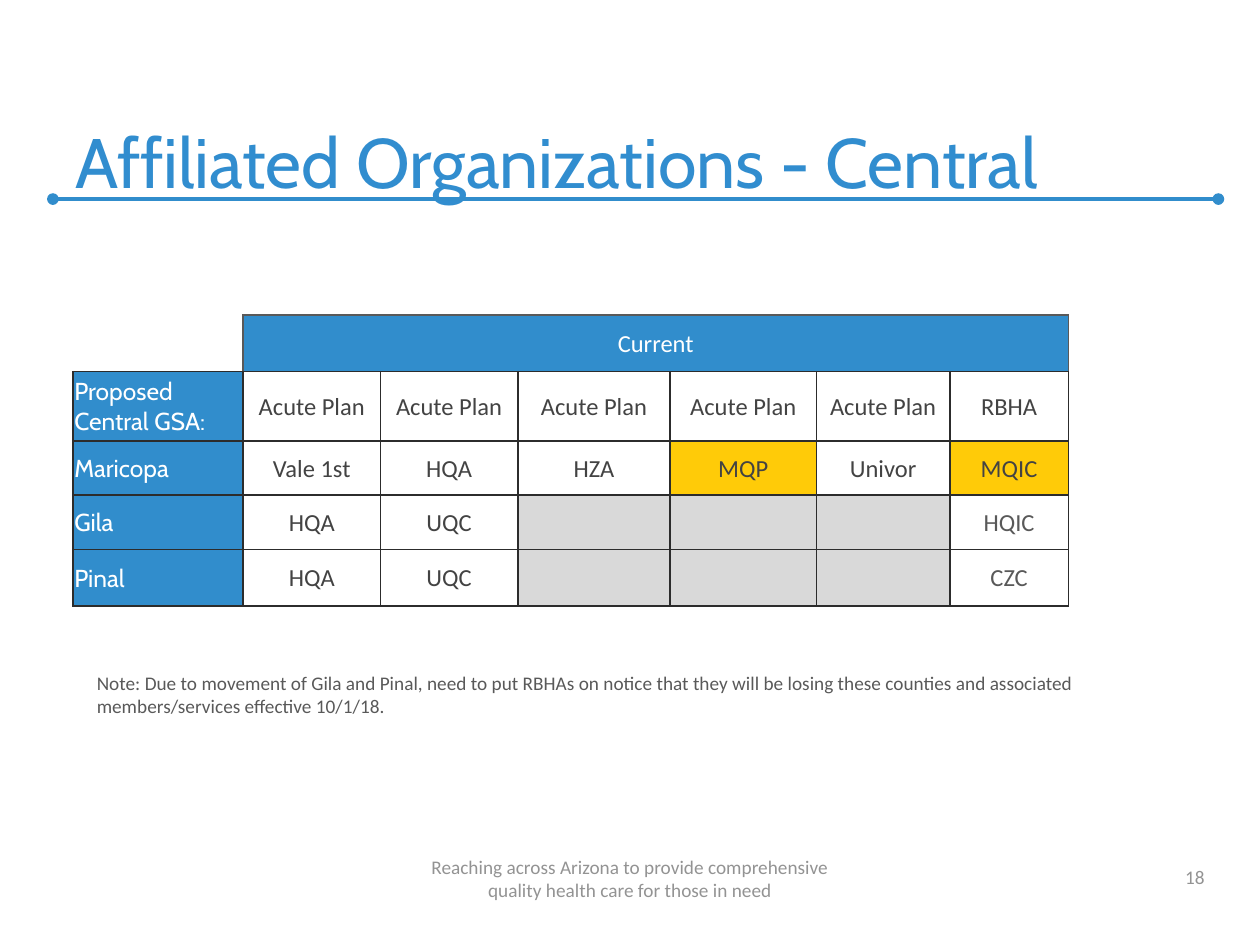
from lxml import etree
from pptx import Presentation
from pptx.dml.color import RGBColor
from pptx.enum.shapes import MSO_CONNECTOR
from pptx.enum.text import MSO_ANCHOR, PP_ALIGN
from pptx.oxml.ns import qn
from pptx.util import Inches, Pt

LEFT, CENTER, RIGHT = PP_ALIGN.LEFT, PP_ALIGN.CENTER, PP_ALIGN.RIGHT
TOP, MIDDLE, BOTTOM = MSO_ANCHOR.TOP, MSO_ANCHOR.MIDDLE, MSO_ANCHOR.BOTTOM
STRAIGHT = MSO_CONNECTOR.STRAIGHT

WIDE, HIGH = 10, 7.5
BLUE, GOLD, GRAY, WHITE = "318DCC", "FFCB08", "D9D9D9", "FFFFFF"
DARK, SOFT, PALE, EDGE = "434343", "595959", "939393", "2C2C2C"
HEAD, BODY = "Cabin", "Calibri"

COLS = [1.35, 1.09, 1.09, 1.21, 1.16, 1.06, 0.94]
ROWS = [0.45, 0.55, 0.43, 0.43, 0.45]
PLANS = [
    ["", "Current", "", "", "", "", ""],
    ["Proposed Central GSA:"] + ["Acute Plan"] * 5 + ["RBHA"],
    ["Maricopa", "Vale 1st", "HQA", "HZA", "MQP", "Univor", "MQIC"],
    ["Gila", "HQA", "UQC", "", "", "", "HQIC"],
    ["Pinal", "HQA", "UQC", "", "", "", "CZC"],
]
MARKED = {(2, 4), (2, 6)}


def color(code):
    return RGBColor.from_string(code)


def style(para, text, align, tone, **font):
    para.text = text
    para.alignment = align
    for name, value in font.items():
        setattr(para.font, name, value)
    para.font.color.rgb = color(tone)


def add_text(slide, box, text, size, tone, name=BODY, align=LEFT, anchor=TOP):
    frame = slide.shapes.add_textbox(*map(Inches, box)).text_frame
    frame.word_wrap = True
    frame.vertical_anchor = anchor
    style(frame.paragraphs[0], text, align, tone, size=Pt(size), name=name)


def add_title(slide, box):
    left, top, width, height = box
    add_text(slide, box, "Affiliated Organizations - Central", 40, "318DCF", HEAD, anchor=BOTTOM)
    level = Inches(top + height - 0.08)
    rule = slide.shapes.add_connector(
        STRAIGHT, Inches(left - 0.08), level, Inches(left + width + 0.09), level)
    rule.line.color.rgb = color(BLUE)
    rule.line.width = Pt(2.25)
    line = rule.line._get_or_add_ln()
    for end in ("a:headEnd", "a:tailEnd"):
        etree.SubElement(line, qn(end), type="oval")
    etree.SubElement(rule._element.spPr, qn("a:effectLst"))


def add_edges(cell, tones):
    """Draw the left, right, top and bottom borders; None leaves one out."""
    props = cell._tc.get_or_add_tcPr()
    for side, tone in zip("LRTB", tones):
        edge = etree.SubElement(props, qn(f"a:ln{side}"), w=str(Pt(1)))
        if tone:
            fill = etree.SubElement(edge, qn("a:solidFill"))
            etree.SubElement(fill, qn("a:srgbClr"), val=tone)
        else:
            etree.SubElement(edge, qn("a:noFill"))


def pick_look(row, col, text):
    """Return the fill, font colour, font name and alignment of a cell."""
    if row == 0:
        return (BLUE if col else None), WHITE, BODY, CENTER
    if col == 0:
        return BLUE, WHITE, HEAD, LEFT
    if not text:
        return GRAY, DARK, BODY, CENTER
    fill = GOLD if (row, col) in MARKED else WHITE
    tone = SOFT if row > 2 and col == len(COLS) - 1 else DARK
    return fill, tone, BODY, CENTER


def pick_edges(row, col):
    if row:
        return [EDGE] * 4
    return [SOFT, SOFT, SOFT, EDGE] if col else [None, SOFT, None, EDGE]


def fill_cell(cell, row, col, text):
    fill, tone, name, align = pick_look(row, col, text)
    form = {"margin_left": Inches(0.01), "margin_right": Inches(0.01),
            "margin_top": Inches(0.01), "margin_bottom": 0,
            "vertical_anchor": MIDDLE}
    for key, value in form.items():
        setattr(cell, key, value)
    add_edges(cell, pick_edges(row, col))
    if fill:
        cell.fill.solid()
        cell.fill.fore_color.rgb = color(fill)
    else:
        cell.fill.background()
    style(cell.text_frame.paragraphs[0], text, align, tone, size=Pt(14), name=name)


def add_plans(slide, left, top):
    box = map(Inches, (left, top, sum(COLS), sum(ROWS)))
    table = slide.shapes.add_table(len(ROWS), len(COLS), *box).table
    table.first_row = table.horz_banding = False
    for col, width in zip(table.columns, COLS):
        col.width = Inches(width)
    for row, height in zip(table.rows, ROWS):
        row.height = Inches(height)
    for r, line in enumerate(PLANS):
        for c, text in enumerate(line):
            fill_cell(table.cell(r, c), r, c, text)
    table.cell(0, 1).merge(table.cell(0, len(COLS) - 1))


def add_footer(slide, top):
    add_text(slide, (7.33, top, 2.33, 0.32), "18", 11, PALE, align=RIGHT, anchor=BOTTOM)
    add_text(slide, (0, top, WIDE, 0.42),
             "Reaching across Arizona to provide comprehensive\v"
             "quality health care for those in need",
             11, PALE, align=CENTER, anchor=BOTTOM)


def main():
    deck = Presentation()
    deck.slide_width, deck.slide_height = Inches(WIDE), Inches(HIGH)
    slide = deck.slides.add_slide(deck.slide_layouts[6])
    add_title(slide, (0.5, 0.33, 9.08, 1.33))
    add_plans(slide, 0.58, 2.5)
    add_footer(slide, 6.78)
    add_text(slide, (0.67, 5.28, 8.67, 0.47),
             "Note: Due to movement of Gila and Pinal, need to put RBHAs on notice "
             "that they will be losing these counties and associated "
             "members/services effective 10/1/18.", 11, SOFT)
    deck.save("out.pptx")


if __name__ == "__main__":
    main()
